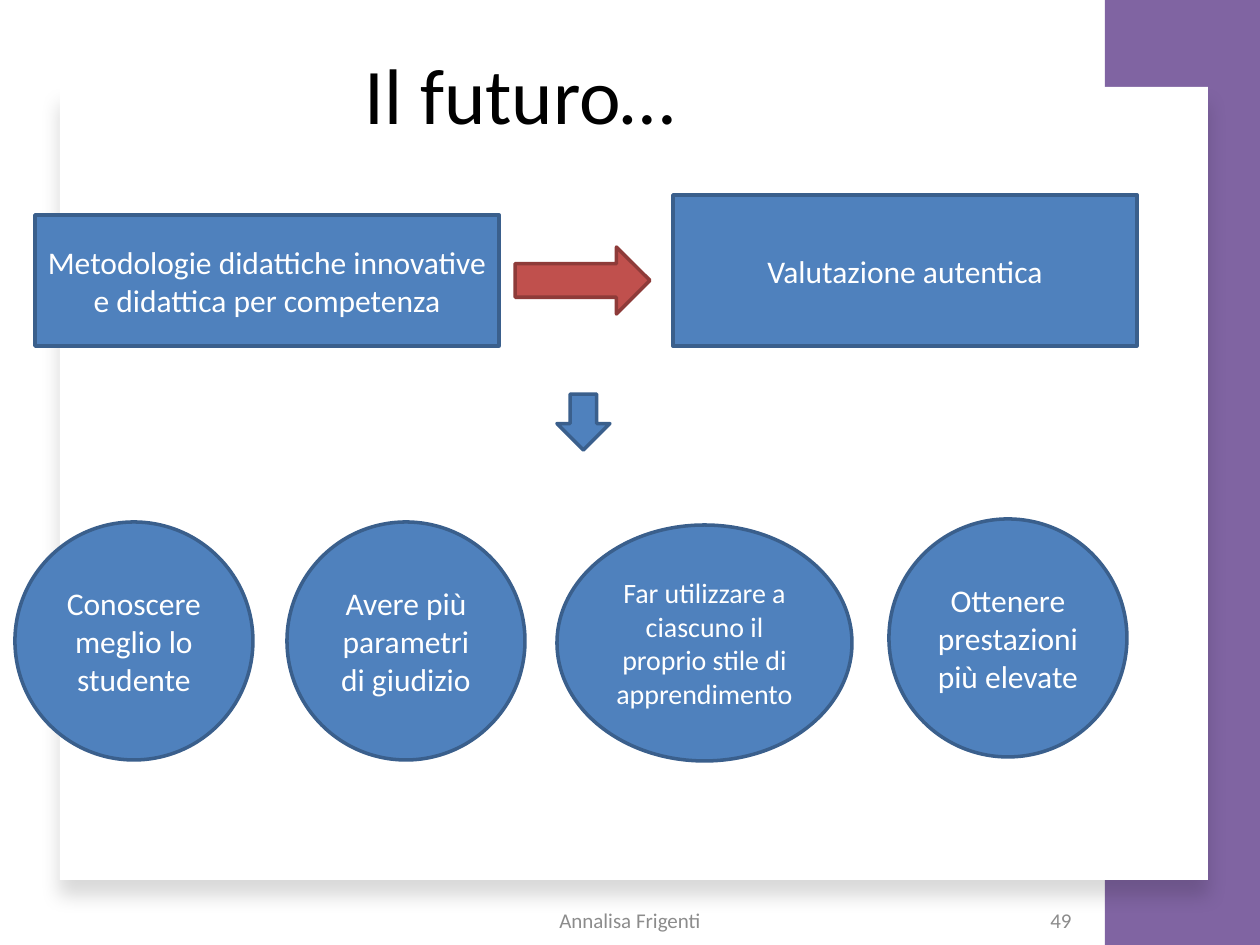
import pptx
import pptx.dml.color
import pptx.enum.shapes
import pptx.enum.text
import pptx.oxml
import pptx.oxml.ns
import pptx.util

SHAPE = pptx.enum.shapes.MSO_SHAPE
ALIGN = pptx.enum.text.PP_ALIGN
COLORS = {
    "purple": "8064A2", "white": "FFFFFF", "black": "000000", "grey": "8C8C8C",
    "blue": "4F81BD", "blue_edge": "3A5F8C", "red": "C0504D", "red_edge": "8E3B39",
}


def px(n):
    return pptx.util.Emu(round(n * 914400 / 126))


def rgb(name):
    return pptx.dml.color.RGBColor.from_string(COLORS[name])


class Deck:
    font = "Calibri"

    def __init__(self, prs):
        self.slide = prs.slides.add_slide(prs.slide_layouts[5])

    def add_text(self, sp, text, size, color, align=ALIGN.CENTER):
        tf = sp.text_frame
        tf.word_wrap = True
        tf.auto_size = pptx.enum.text.MSO_AUTO_SIZE.NONE
        tf.vertical_anchor = pptx.enum.text.MSO_ANCHOR.MIDDLE
        p = tf.paragraphs[0]
        p.alignment = align
        r = p.add_run()
        r.text = text
        r.font.name = self.font
        r.font.size = pptx.util.Pt(size)
        r.font.color.rgb = rgb(color)
        return p

    def title(self, box, text, size):
        sp = self.slide.shapes.title
        sp.left, sp.top, sp.width, sp.height = map(px, box)
        self.slide.shapes._spTree.append(sp._element)  # in front of the panels
        self.add_text(sp, text, size, "black")

    def label(self, box, text, align):
        sp = self.slide.shapes.add_textbox(*map(px, box))
        p = self.add_text(sp, text, 12, "grey", align)
        p.space_after = pptx.util.Pt(6)

    def shape(self, kind, box, fill, edge=None, text=None, size=18):
        sp = self.slide.shapes.add_shape(kind, *map(px, box))
        sp.shadow.inherit = False
        sp.fill.solid()
        sp.fill.fore_color.rgb = rgb(fill)
        if edge:
            sp.line.color.rgb = rgb(edge)
            sp.line.width = pptx.util.Pt(2)
        else:
            sp.line.fill.background()
        if text:
            self.add_text(sp, text, size, "white")
        return sp

    def drop_shadow(self, sp, alpha, blur, dist):
        """Cast a black shadow straight down; blur and dist are points."""
        effects = sp._element.spPr.find(pptx.oxml.ns.qn("a:effectLst"))
        effects.append(pptx.oxml.parse_xml(
            f'<a:outerShdw {pptx.oxml.ns.nsdecls("a")} blurRad="{pptx.util.Pt(blur)}" '
            f'dist="{pptx.util.Pt(dist)}" dir="5400000" algn="t" rotWithShape="0">'
            f'<a:srgbClr val="{COLORS["black"]}"><a:alpha val="{alpha * 1000}"/>'
            '</a:srgbClr></a:outerShdw>'))


def main():
    prs = pptx.Presentation()
    prs.slide_width, prs.slide_height = px(1260), px(945)
    deck = Deck(prs)

    deck.shape(SHAPE.RECTANGLE, (1105, 0, 155, 945), "purple")
    page = deck.shape(SHAPE.RECTANGLE, (60, 87, 1148, 793), "white")
    deck.drop_shadow(page, alpha=15, blur=11, dist=10)

    deck.title((52, 26, 936, 134), "Il futuro…", 45)
    deck.label((417, 895, 426, 50), "Annalisa Frigenti", ALIGN.CENTER)
    deck.label((890, 895, 194, 50), "49", ALIGN.RIGHT)

    deck.shape(SHAPE.DOWN_ARROW, (557, 394, 53, 56), "blue", "blue_edge")
    goals = [
        ((15, 522, 238, 238), "Conoscere meglio lo studente", 18),
        ((287, 522, 238, 238), "Avere più parametri di giudizio", 18),
        ((557, 525, 295, 236),
         "Far utilizzare a ciascuno il proprio stile di apprendimento", 16),
        ((889, 519, 238, 238), "Ottenere prestazioni più elevate", 18),
    ]
    for box, text, size in goals:
        deck.shape(SHAPE.OVAL, box, "blue", "blue_edge", text, size)

    methods = [
        ((35, 215, 464, 131),
         "Metodologie didattiche innovative e didattica per competenza"),
        ((673, 195, 464, 151), "Valutazione autentica"),
    ]
    for box, text in methods:
        deck.shape(SHAPE.RECTANGLE, box, "blue", "blue_edge", text)
    deck.shape(SHAPE.RIGHT_ARROW, (515, 247, 135, 67), "red", "red_edge")

    prs.save("out.pptx")


if __name__ == "__main__":
    main()
